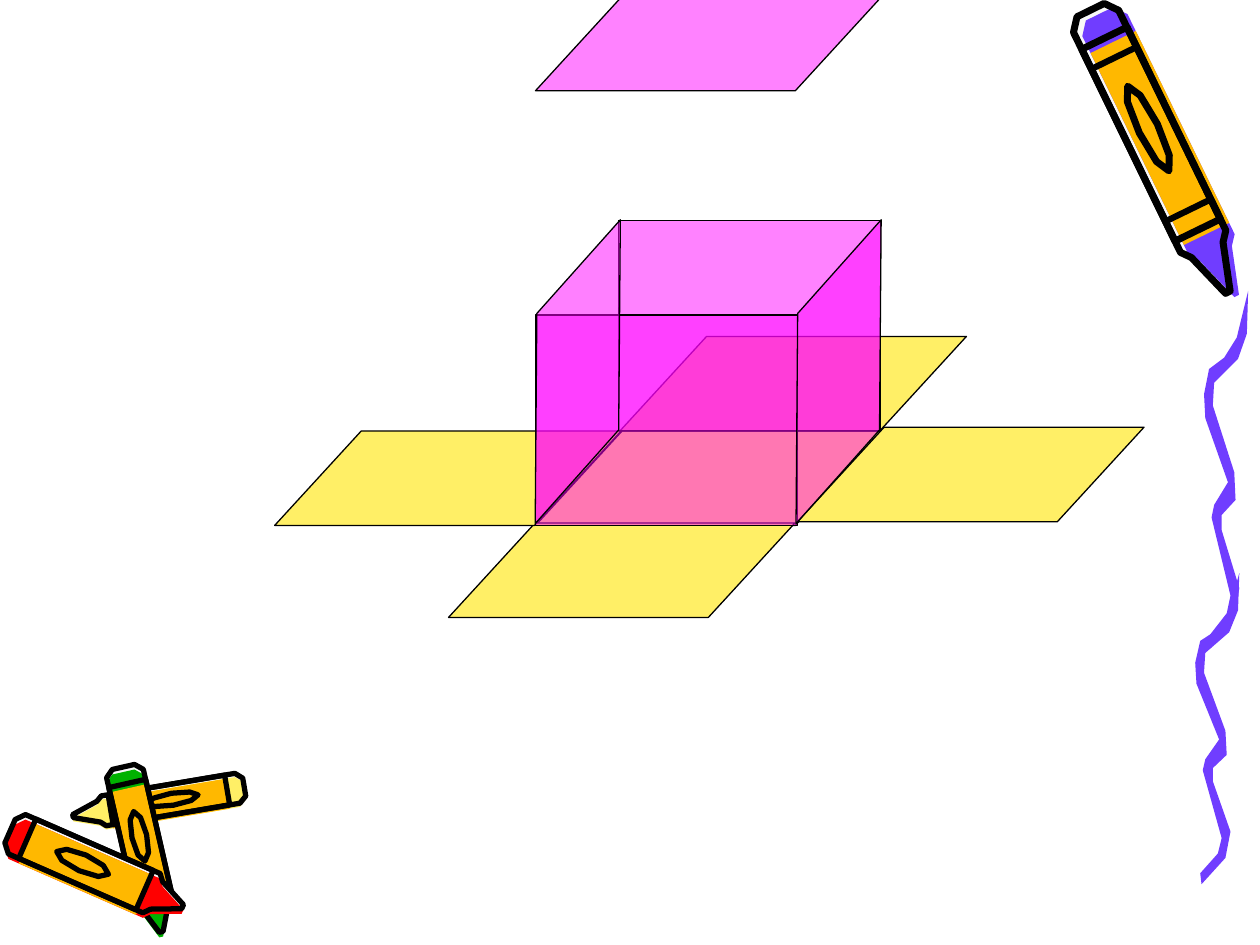
import math
from lxml import etree
from pptx import Presentation
from pptx import util as u
from pptx.dml.color import RGBColor
from pptx.enum import shapes
from pptx.oxml.ns import qn

BLACK = RGBColor(0x00, 0x00, 0x00)
PAPER = RGBColor(0xF8, 0xF8, 0xF8)
PURPLE = RGBColor(0x70, 0x3D, 0xFF)
ORANGE = RGBColor(0xFF, 0xB8, 0x00)
RED = RGBColor(0xFF, 0x00, 0x00)
GREEN = RGBColor(0x00, 0xB2, 0x00)
YELLOW = RGBColor(0xFF, 0xEF, 0x66)
MAGENTA = RGBColor(0xFF, 0x00, 0xFF)

presentation = Presentation()
presentation.slide_width = u.Inches(10)
presentation.slide_height = u.Inches(7.5)
slide = presentation.slides.add_slide(presentation.slide_layouts[6])


def paint(shape, fill=None, line_width=0, opacity=100):
    shape.shadow.inherit = False
    if fill is None:
        shape.fill.background()
    else:
        shape.fill.solid()
        shape.fill.fore_color.rgb = fill
    if line_width:
        shape.line.color.rgb = BLACK
        shape.line.width = u.Pt(line_width)
    else:
        shape.line.fill.background()
    if opacity < 100:
        color_element = shape._element.spPr.find(qn("a:solidFill"))[0]
        etree.SubElement(color_element, qn("a:alpha")).set("val", str(opacity * 1000))


def add_outline(points, fill=None, line_width=0):
    corners = [(round(x * 1000), round(y * 1000)) for x, y in points]
    builder = slide.shapes.build_freeform(*corners[0], scale=u.Inches(0.001))
    builder.add_line_segments(corners[1:], close=True)
    paint(builder.convert_to_shape(), fill, line_width)


half_body = [(0, 0.6), (0.04, 1), (0.82, 1), (0.85, 0.7), (1, 0.1)]
body = half_body + [(along, -across) for along, across in reversed(half_body)]
wrapper = [(0.1, 1), (0.1, -1), (0.78, -1), (0.78, 1)]
label = [(0.42 + 0.15 * math.cos(step * math.pi / 4), 0.4 * math.sin(step * math.pi / 4))
         for step in range(8)]
bands = [[(start, 1), (start, -1), (start + 0.02, -1), (start + 0.02, 1)]
         for start in (0.16, 0.7)]

crayons = [
    (YELLOW, (1.94, 6.25), (0.58, 6.48), 0.12, (0, 0.03), 3),
    (GREEN, (0.98, 6.09), (1.28, 7.4), 0.15, (0, 0.04), 3),
    (RED, (0.08, 6.6), (1.45, 7.2), 0.17, (0, 0.04), 3),
    (PURPLE, (8.66, 0.08), (9.75, 2.32), 0.2, (0.07, 0.03), 4),
]
for color, (end_x, end_y), (tip_x, tip_y), radius, (shift_x, shift_y), ink in crayons:
    run, rise = tip_x - end_x, tip_y - end_y
    length = math.hypot(run, rise)
    layers = [(body, PAPER, 0, 0), (body, color, 0, 1), (wrapper, ORANGE, 0, 1),
              (body, None, ink, 0), (wrapper, None, ink, 0), (label, None, ink, 0)]
    if color == PURPLE:
        layers += [(band, BLACK, 0, 0) for band in bands]
    for part, fill, line_width, shifted in layers:
        points = [(end_x + along * run - across * radius * rise / length + shifted * shift_x,
                   end_y + along * rise + across * radius * run / length + shifted * shift_y)
                  for along, across in part]
        add_outline(points, fill, line_width)

squiggle = [
    (9.91, 2.31), (9.9, 2.65), (9.83, 2.85), (9.64, 3.04), (9.63, 3.22), (9.8, 3.75),
    (9.81, 3.97), (9.7, 4.09), (9.7, 4.21), (9.84, 4.67), (9.8, 4.91), (9.61, 5.15),
    (9.6, 5.05), (9.74, 4.87), (9.77, 4.73), (9.62, 4.11), (9.64, 4.01), (9.75, 3.83),
    (9.57, 3.32), (9.56, 3.13), (9.6, 2.93), (9.72, 2.84), (9.82, 2.68),
]
for shift, top, stretch in [(-0.07, 4.55, 0.87), (0, 2.31, 1)]:
    add_outline([(x + shift, top + (y - 2.31) * stretch) for x, y in squiggle], PURPLE)

PARALLELOGRAM = shapes.MSO_SHAPE.PARALLELOGRAM
RECTANGLE = shapes.MSO_SHAPE.RECTANGLE
flat_size, front_size, side_size = (2.75, 0.75), (2.08, 1.67), (2.25, 1.1)

faces = [(PARALLELOGRAM, position, flat_size, 0.917, 0, YELLOW, 100)
         for position in [(4.25, 3.42), (3.56, 4.15), (2.18, 3.42), (4.92, 2.67), (6.33, 3.39)]]
faces += [(RECTANGLE, position, front_size, None, 0, MAGENTA, opacity)
          for position, opacity in [((4.91, 1.75), 49), ((4.25, 2.5), 50)]]
faces += [(PARALLELOGRAM, (left, 2.4), side_size, 1.14, 131.7, MAGENTA, 50)
          for left in (5.53, 3.46)]
faces.append((PARALLELOGRAM, (4.25, -0.03), flat_size, 0.917, 0, MAGENTA, 49))

for kind, position, size, slant, rotation, color, opacity in faces:
    face = slide.shapes.add_shape(kind, *[u.Inches(value) for value in position + size])
    face.rotation = rotation
    if slant is not None:
        face.adjustments[0] = slant
    paint(face, color, 0.75, opacity)

presentation.save("out.pptx")
